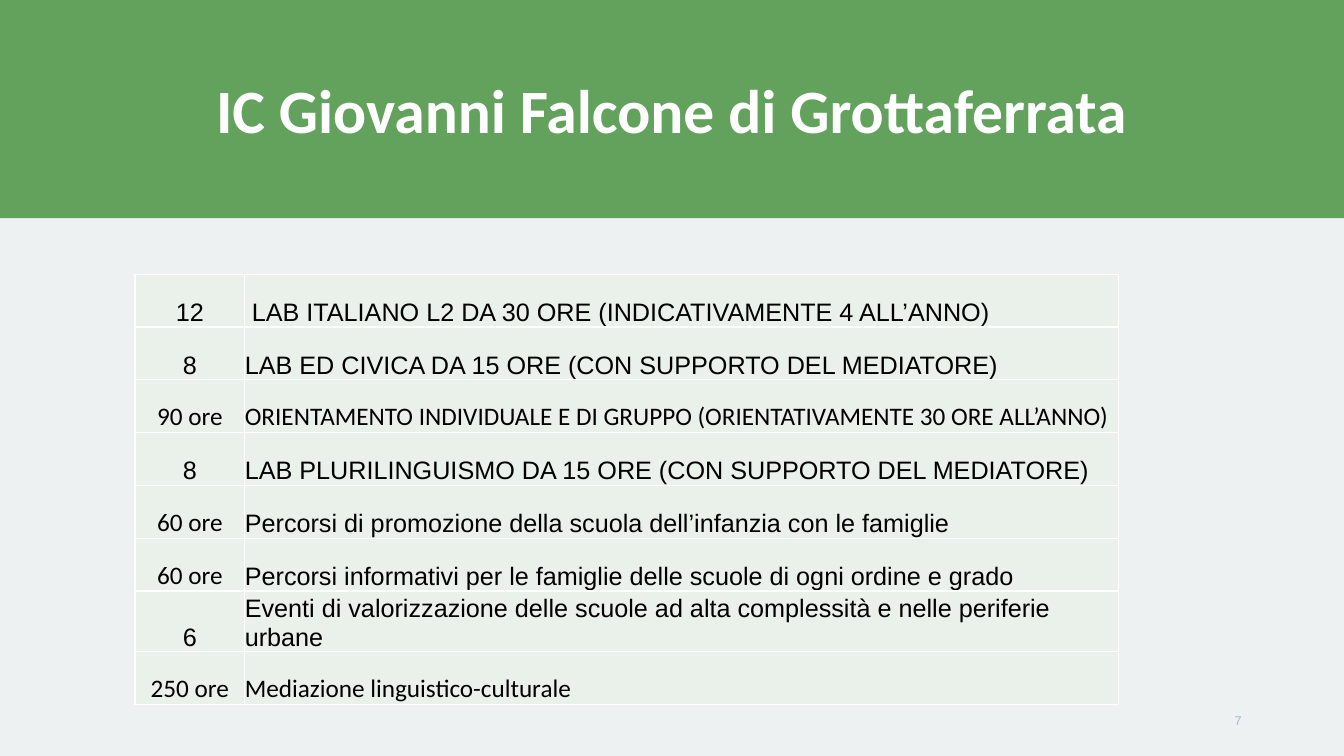
from dataclasses import dataclass

from lxml.etree import SubElement
from pptx import Presentation
from pptx.dml.color import RGBColor as Rgb
from pptx.enum.shapes import MSO_SHAPE as Shape
from pptx.enum.text import MSO_ANCHOR as Anchor, PP_ALIGN as Align
from pptx.oxml.ns import qn
from pptx.util import Cm, Pt


@dataclass(frozen=True)
class Theme:
    back: str = "EDF1F2"
    band: str = "62A25D"
    cell: str = "EAF0EA"
    white: str = "FFFFFF"
    black: str = "000000"
    grey: str = "A7BBC0"
    sans: str = "Arial"
    body: str = "Calibri"
    head: int = 44
    text: int = 18
    note: int = 9


THEME = Theme()
WIDTH, HEIGHT = Cm(33.87), Cm(19.05)
COLS = Cm(2.77), Cm(22.02)
ROW = Cm(1.33)

# Amount, its font, activity, its font
ROWS = [
    ("12", THEME.sans, " LAB ITALIANO L2 DA 30 ORE (INDICATIVAMENTE 4 ALL’ANNO)", THEME.sans),
    ("8", THEME.sans, "LAB ED CIVICA DA 15 ORE (CON SUPPORTO DEL MEDIATORE)", THEME.sans),
    ("90 ore", THEME.body,
     "ORIENTAMENTO INDIVIDUALE E DI GRUPPO (ORIENTATIVAMENTE 30 ORE ALL’ANNO)", THEME.body),
    ("8", THEME.sans, "LAB PLURILINGUISMO DA 15 ORE (CON SUPPORTO DEL MEDIATORE)", THEME.sans),
    ("60 ore", THEME.body,
     "Percorsi di promozione della scuola dell’infanzia con le famiglie", THEME.sans),
    ("60 ore", THEME.body,
     "Percorsi informativi per le famiglie delle scuole di ogni ordine e grado", THEME.sans),
    ("6", THEME.sans,
     "Eventi di valorizzazione delle scuole ad alta complessità e nelle periferie urbane",
     THEME.sans),
    ("250 ore", THEME.body, "Mediazione linguistico-culturale", THEME.body),
]


def paint(fill, color):
    fill.solid()
    fill.fore_color.rgb = Rgb.from_string(color)


def write(frame, text, *, size=THEME.text, font=THEME.sans, color=THEME.black,
          bold=False, align=Align.LEFT, space=1.0):
    frame.word_wrap = True
    para = frame.paragraphs[0]
    para.alignment = align
    para.line_spacing = space
    run = para.add_run()
    run.text = text
    run.font.size = Pt(size)
    run.font.name = font
    run.font.bold = bold
    run.font.color.rgb = Rgb.from_string(color)


def add_band(slide):
    band = slide.shapes.add_shape(Shape.RECTANGLE, 0, 0, WIDTH, Cm(5.5))
    band.shadow.inherit = False
    paint(band.fill, THEME.band)
    band.line.fill.background()


def add_label(slide, text, box, **style):
    frame = slide.shapes.add_textbox(*box).text_frame
    frame.vertical_anchor = Anchor.MIDDLE
    write(frame, text, **style)


def add_edges(cell):
    """Draw a thin white line on each side of the cell."""
    props = cell._tc.get_or_add_tcPr()
    for spot, side in enumerate(("lnL", "lnR", "lnT", "lnB")):
        line = SubElement(props, qn(f"a:{side}"), w=str(Pt(1)))
        fill = SubElement(line, qn("a:solidFill"))
        SubElement(fill, qn("a:srgbClr"), val=THEME.white)
        props.insert(spot, line)


def fill_cell(cell, text, font, align):
    cell.margin_left = cell.margin_right = 0
    cell.margin_top = cell.margin_bottom = 0
    cell.vertical_anchor = Anchor.BOTTOM
    paint(cell.fill, THEME.cell)
    add_edges(cell)
    write(cell.text_frame, text, font=font, align=align)


def add_grid(slide):
    grid = slide.shapes.add_table(
        len(ROWS), len(COLS), Cm(3.4), Cm(6.91), sum(COLS), ROW * len(ROWS)).table
    grid.first_row = grid.horz_banding = False
    for col, width in zip(grid.columns, COLS):
        col.width = width
    for row, (count, face, task, font) in zip(grid.rows, ROWS):
        row.height = ROW
        fill_cell(row.cells[0], count, face, Align.CENTER)
        fill_cell(row.cells[1], task, font, Align.LEFT)


def main():
    deck = Presentation()
    deck.slide_width, deck.slide_height = WIDTH, HEIGHT
    slide = deck.slides.add_slide(deck.slide_layouts[6])
    paint(slide.background.fill, THEME.back)
    add_band(slide)
    add_label(slide, "IC Giovanni Falcone di Grottaferrata",
              (Cm(2.33), Cm(1.01), Cm(29.21), Cm(3.68)), size=THEME.head,
              font=THEME.body, color=THEME.white, bold=True, align=Align.CENTER, space=0.9)
    add_label(slide, "7", (Cm(23.92), Cm(17.66), Cm(7.62), Cm(1.01)),
              size=THEME.note, color=THEME.grey, align=Align.RIGHT)
    add_grid(slide)
    deck.save("out.pptx")


if __name__ == "__main__":
    main()
